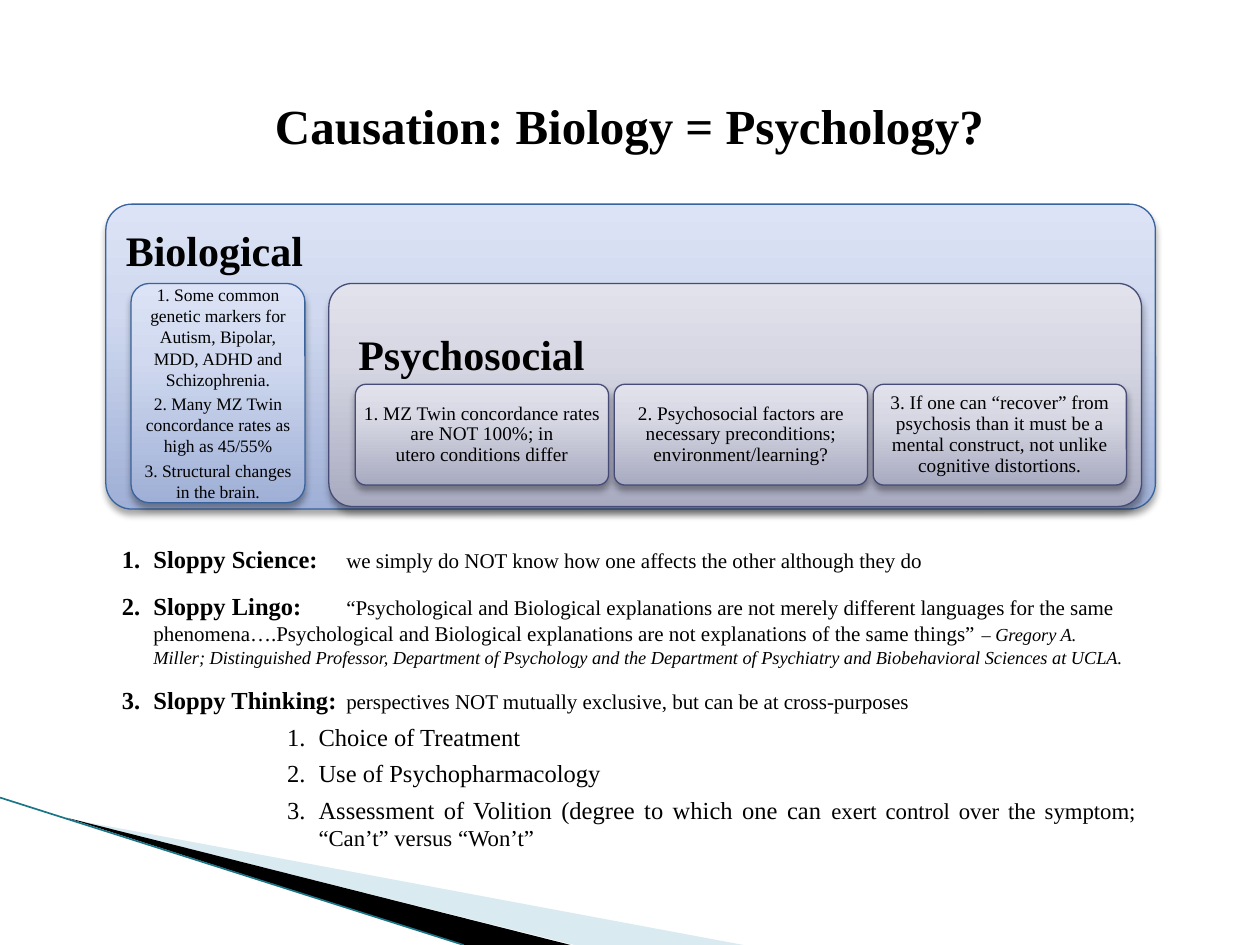
from dataclasses import dataclass
from copy import deepcopy
from pptx import Presentation
from pptx.dml.color import RGBColor
from pptx.enum.shapes import MSO_CONNECTOR, MSO_SHAPE
from pptx.enum.text import MSO_ANCHOR, PP_ALIGN
from pptx.oxml.ns import qn
from pptx.oxml.xmlchemy import OxmlElement
from pptx.util import Inches, Pt

COLORS = {
    "text": "000000", "wedge": "000000", "pale": "A0CBDC", "rule": "1B7587",
    "blue_line": "39639D", "violet_line": "474B78",
}
GRADIENTS = {
    "blue": ("9FAFD6", "D0D9EF", "DCE3F6"),
    "violet": ("A8AAC0", "D6D7E3", "E2E2EC"),
}
STOPS = (0, 0.65, 1)
FONT = "Times New Roman"


@dataclass
class Run:
    text: str
    size: float
    bold: bool = False
    italic: bool = False


@dataclass
class Para:
    runs: list[Run]
    fmt: dict
    numbered: bool = False
    indent: float = 0
    tabs: tuple = ()


@dataclass
class Panel:
    box: tuple
    tone: str
    adj: float
    insets: tuple
    paras: list[Para]
    anchor: MSO_ANCHOR = MSO_ANCHOR.MIDDLE


def rgb(name: str) -> RGBColor:
    return RGBColor.from_string(COLORS[name])


def add_child(parent, tag: str, **attrs):
    el = OxmlElement(tag)
    for key, value in attrs.items():
        el.set(key, str(value))
    parent.append(el)
    return el


def write_run(p, run: Run) -> None:
    for i, line in enumerate(run.text.split("\n")):
        if i:
            p.add_line_break()
        r = p.add_run()
        r.text = line
        values = {"name": FONT, "size": Pt(run.size), "bold": run.bold, "italic": run.italic}
        for name, value in values.items():
            setattr(r.font, name, value)
        r.font.color.rgb = rgb("text")


def write_text(tf, paras: list[Para], anchor: MSO_ANCHOR, insets: tuple) -> None:
    tf.word_wrap = True
    tf.vertical_anchor = anchor
    for side, inset in zip(("left", "top", "right", "bottom"), insets):
        setattr(tf, f"margin_{side}", Inches(inset))
    for i, para in enumerate(paras):
        p = tf.paragraphs[0] if i == 0 else tf.add_paragraph()
        pPr = p._p.get_or_add_pPr()
        for name, value in para.fmt.items():
            if i or name != "space_before":
                setattr(p, name, value)
        if para.numbered:
            pPr.set("marL", str(Inches(para.indent)))
            pPr.set("indent", str(Inches(-0.25)))
            add_child(pPr, "a:buFont", typeface=FONT)
            add_child(pPr, "a:buAutoNum", type="arabicPeriod")
        if para.tabs:
            tab_list = add_child(pPr, "a:tabLst")
            for pos in para.tabs:
                add_child(tab_list, "a:tab", pos=Inches(pos), algn="l")
        for run in para.runs:
            write_run(p, run)


def add_text(s, box: tuple, paras: list[Para], anchor: MSO_ANCHOR) -> None:
    tb = s.shapes.add_textbox(*map(Inches, box))
    write_text(tb.text_frame, paras, anchor, (0.1, 0.05, 0.1, 0.05))


def add_panel(s, panel: Panel) -> None:
    sp = s.shapes.add_shape(MSO_SHAPE.ROUNDED_RECTANGLE, *map(Inches, panel.box))
    sp.adjustments[0] = panel.adj
    sp.fill.gradient()
    sp.fill.gradient_angle = 90
    gs_list = sp._element.spPr.find(qn("a:gradFill")).find(qn("a:gsLst"))
    gs_list.append(deepcopy(gs_list[-1]))
    for stop, pos, color in zip(sp.fill.gradient_stops, STOPS, GRADIENTS[panel.tone]):
        stop.position = pos
        stop.color.rgb = RGBColor.from_string(color)
    sp.line.color.rgb = rgb(f"{panel.tone}_line")
    sp.line.width = Pt(0.75)
    sp.shadow.inherit = False
    effects = sp._element.spPr.find(qn("a:effectLst"))
    shadow = add_child(effects, "a:outerShdw", blurRad=Pt(4), dist=Pt(3), dir=5400000, rotWithShape=0)
    add_child(add_child(shadow, "a:srgbClr", val="000000"), "a:alpha", val=35000)
    write_text(sp.text_frame, panel.paras, panel.anchor, panel.insets)


def add_wedge(s, points: list[tuple], color: str, alpha: int) -> None:
    start, *rest = [(Inches(x), Inches(y)) for x, y in points]
    fb = s.shapes.build_freeform(*start)
    fb.add_line_segments(rest, close=True)
    sp = fb.convert_to_shape()
    sp.fill.solid()
    sp.fill.fore_color.rgb = rgb(color)
    add_child(sp._element.spPr.find(qn("a:solidFill"))[0], "a:alpha", val=alpha * 1000)
    sp.line.fill.background()
    sp.shadow.inherit = False


def heading(text: str, spacing: float) -> list[Para]:
    fmt = {"alignment": PP_ALIGN.LEFT, "line_spacing": spacing}
    return [Para([Run(text, 24, True)], fmt)]


def centred(text: str, size: float, **fmt) -> Para:
    return Para([Run(text, size)], {"alignment": PP_ALIGN.CENTER, **fmt})


def point(label: str, *runs: Run) -> Para:
    fmt = {"level": 4, "space_before": Pt(6), "space_after": Pt(4)}
    return Para([Run(f"{label}:\t", 14, True), *runs], fmt, True, 1.07, (1.53, 2.6))


def subpoint(*runs: Run) -> Para:
    fmt = {"alignment": PP_ALIGN.JUSTIFY, "space_before": Pt(0), "space_after": Pt(4)}
    return Para(list(runs), fmt, True, 2.38)


MARKERS = [
    "1. Some common genetic markers for Autism, Bipolar, MDD, ADHD and Schizophrenia.",
    "2. Many MZ Twin concordance rates as high as 45/55%",
    "3. Structural changes in the brain.",
]
FACTORS = [
    "1. MZ Twin concordance rates are NOT 100%; in\nutero conditions differ",
    "2. Psychosocial factors are necessary preconditions; environment/learning?",
    "3. If one can “recover” from psychosis than it must be a mental construct, "
    "not unlike cognitive distortions.",
]
PANELS = [
    Panel((0.84, 1.62, 8.33, 2.42), "blue", 0.085, (0.1, 0.15, 0.1, 0.1),
          heading("Biological", 0.9), MSO_ANCHOR.TOP),
    Panel((1.04, 2.25, 1.38, 1.74), "blue", 0.105, (0.04,) * 4,
          [centred(t, 10, space_after=Pt(2 if t != MARKERS[-1] else 0)) for t in MARKERS]),
    Panel((2.61, 2.25, 6.45, 1.77), "violet", 0.105, (0.18, 0.1, 0.1, 0.1),
          heading("Psychosocial", 1.5), MSO_ANCHOR.TOP),
    *[Panel((2.82 + 2.055 * i, 3.05, 2.01, 0.8), "violet", 0.105, (0.03,) * 4,
            [centred(t, 11, line_spacing=0.9)]) for i, t in enumerate(FACTORS)],
]
POINTS = [
    point("Sloppy Science",
          Run("we simply do NOT know how one affects the other although they do", 12)),
    point("Sloppy Lingo",
          Run("“Psychological and Biological explanations are not merely different languages "
              "for the same phenomena….Psychological and Biological explanations are not "
              "explanations of the same things” ", 12),
          Run("– Gregory A.\nMiller; Distinguished Professor, Department of Psychology and the "
              "Department of Psychiatry and Biobehavioral Sciences at UCLA.", 10.5, italic=True)),
    point("Sloppy Thinking",
          Run("perspectives NOT mutually exclusive, but can be at cross-purposes", 12)),
    subpoint(Run("Choice of Treatment", 14)),
    subpoint(Run("Use of Psychopharmacology", 14)),
    subpoint(Run("Assessment of Volition (degree to which one can ", 14),
             Run("exert control over the symptom; “Can’t” versus “Won’t”", 13)),
]


def main() -> None:
    prs = Presentation()
    prs.slide_width, prs.slide_height = Inches(10), Inches(7.5)
    s = prs.slides.add_slide(prs.slide_layouts[6])
    add_wedge(s, [(0.55, 6.5), (5.9, 7.5), (4.56, 7.5)], "pale", 40)
    add_wedge(s, [(0.53, 6.49), (4.53, 7.5), (3.68, 7.5)], "wedge", 100)
    rule = s.shapes.add_connector(MSO_CONNECTOR.STRAIGHT, *map(Inches, (0, 6.33, 3.68, 7.5)))
    rule.line.color.rgb = rgb("rule")
    rule.line.width = Pt(0.95)
    add_child(rule._element.spPr, "a:effectLst")
    add_text(s, (0.05, 4.27, 9.06, 1.39), POINTS, MSO_ANCHOR.TOP)
    for panel in PANELS:
        add_panel(s, panel)
    title = Para([Run("Causation: Biology = Psychology?", 28, True)], {"alignment": PP_ALIGN.CENTER})
    add_text(s, (0.24, 0.37, 9.51, 1.25), [title], MSO_ANCHOR.MIDDLE)
    prs.save("out.pptx")


if __name__ == "__main__":
    main()
